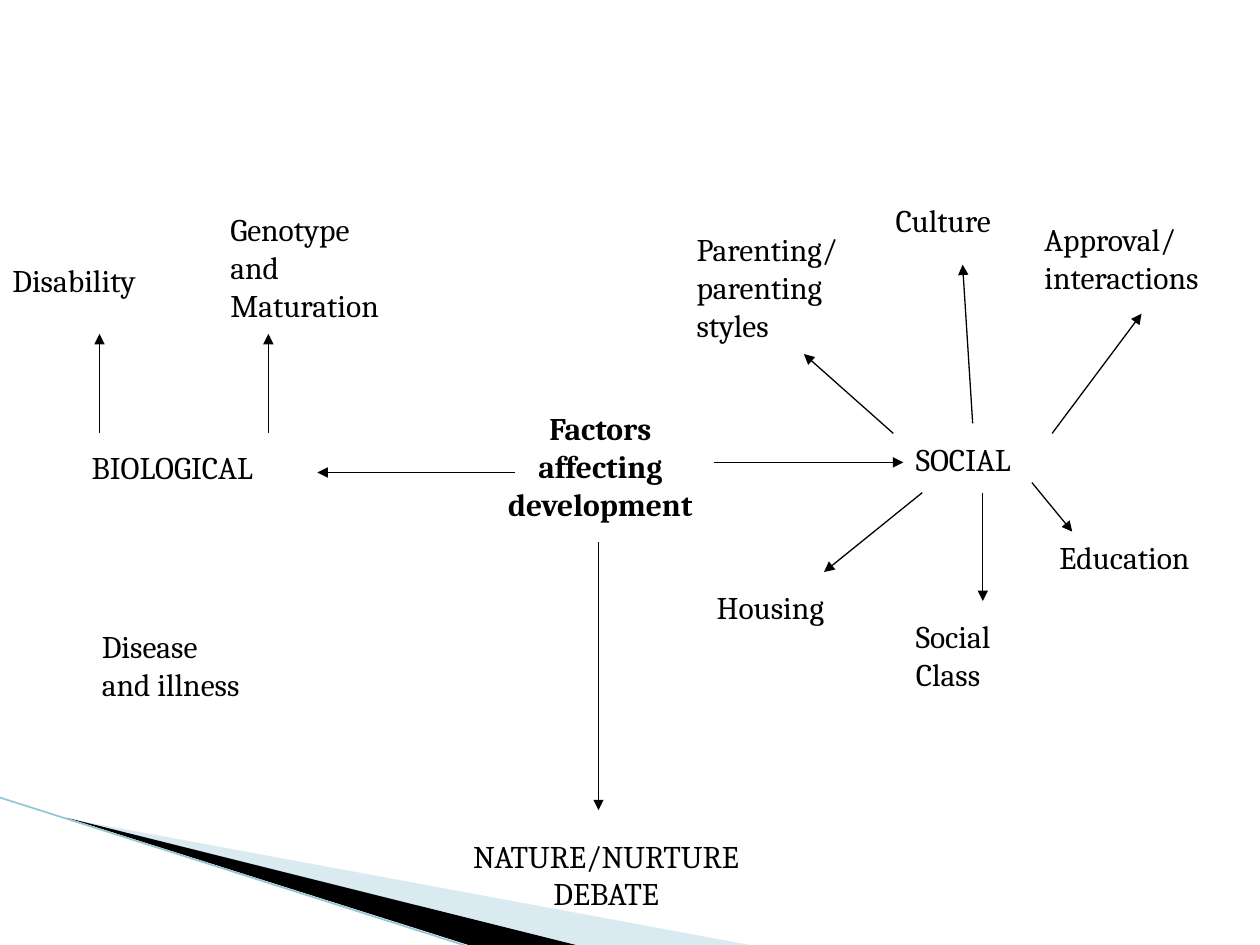
from dataclasses import dataclass

from lxml.etree import SubElement
from pptx import Presentation
from pptx.dml.color import RGBColor as RGB
from pptx.enum.shapes import MSO_CONNECTOR as CONN
from pptx.enum.text import PP_ALIGN as ALIGN
from pptx.oxml.ns import qn
from pptx.util import Pt

PX = 9144  # EMU in one px, at 100 px to the inch
LINE_H, PAD = 30, 10  # height of a text line, and of both text insets together


@dataclass(frozen=True)
class Theme:
    font: str = "Cambria"
    size: int = 18
    ink: str = "000000"
    pale: str = "A0CBDC"
    edge: str = "97C5D8"
    arrow_width: float = 0.75
    edge_width: float = 0.95


THEME = Theme()


def add_text(slide, text, x, y, w, lines=1, bold=False, align=ALIGN.LEFT):
    box = slide.shapes.add_textbox(x * PX, y * PX, w * PX, (lines * LINE_H + PAD) * PX)
    tf = box.text_frame
    tf.word_wrap = True
    p = tf.paragraphs[0]
    p.alignment = align
    r = p.add_run()
    r.text = text
    r.font.name, r.font.size, r.font.bold = THEME.font, Pt(THEME.size), bold
    r.font.color.rgb = RGB.from_string(THEME.ink)


def add_line(slide, x1, y1, x2, y2, color=THEME.ink, width=THEME.arrow_width, arrow=True):
    c = slide.shapes.add_connector(CONN.STRAIGHT, x1 * PX, y1 * PX, x2 * PX, y2 * PX)
    c.line.color.rgb = RGB.from_string(color)
    c.line.width = Pt(width)
    if arrow:
        SubElement(c.line._get_or_add_ln(), qn("a:tailEnd"), type="triangle")
    SubElement(c._element.spPr, qn("a:effectLst"))


def add_wedge(slide, points, color, alpha=None):
    """Draw a filled outline; alpha is its opacity in percent."""
    fb = slide.shapes.build_freeform(*points[0], scale=PX)
    fb.add_line_segments(points[1:], close=True)
    sp = fb.convert_to_shape()
    sp.shadow.inherit = False
    sp.line.fill.background()
    sp.fill.solid()
    sp.fill.fore_color.rgb = RGB.from_string(color)
    if alpha is not None:
        clr = sp._element.spPr.find(qn("a:solidFill"))[0]
        SubElement(clr, qn("a:alpha"), val=str(alpha * 1000))


def draw_corner(slide, x, y):
    def shift(points):
        return [(x + dx, y + dy) for dx, dy in points]

    add_wedge(slide, shift([(55, 17), (595, 117), (456, 117)]), THEME.pale, 40)
    add_wedge(slide, shift([(53, 16), (457, 117), (372, 117)]), THEME.ink)
    add_line(slide, x, y, x + 371, y + 118, THEME.edge, THEME.edge_width, arrow=False)


def draw_group(slide, x, y, labels, arrows):
    """Place labels (text, x, y, width, lines) and arrows (x1, y1, x2, y2)."""
    for text, dx, dy, w, lines in labels:
        add_text(slide, text, x + dx, y + dy, w, lines)
    for x1, y1, x2, y2 in arrows:
        add_line(slide, x + x1, y + y1, x + x2, y + y2)


def draw_hub(slide, x, y):
    add_text(slide, "Factors affecting development", x + 134, y, 181, 3,
             bold=True, align=ALIGN.CENTER)
    add_text(slide, "NATURE/NURTURE DEBATE", x + 95, y + 339, 268, 2, align=ALIGN.CENTER)
    draw_group(slide, x, y, [], [
        (157, 55, 0, 55),
        (315, 47, 465, 47),
        (223, 110, 223, 323),
    ])


def draw_biological(slide, x, y):
    draw_group(slide, x, y, [
        ("BIOLOGICAL", 63, 189, 173, 1),
        ("Disability", 0, 40, 134, 1),
        ("Genotype and Maturation", 173, 0, 150, 3),
        ("Disease and illness", 71, 331, 134, 3),
    ], [(dx, 182, dx, 103) for dx in (79, 213)])


def draw_social(slide, x, y):
    draw_group(slide, x, y, [
        ("SOCIAL", 174, 189, 118, 1),
        ("Parenting/parenting styles", 0, 23, 134, 3),
        ("Culture", 158, 0, 134, 1),
        ("Approval/ interactions", 276, 15, 165, 2),
        ("Education", 288, 267, 169, 1),
        ("Social Class", 174, 330, 94, 2),
        ("Housing", 16, 307, 134, 1),
    ], [
        (166, 189, 95, 126),
        (229, 181, 221, 55),
        (292, 189, 363, 94),
        (276, 228, 308, 267),
        (237, 236, 237, 322),
        (189, 236, 111, 299),
    ])


def main():
    prs = Presentation()
    prs.slide_width, prs.slide_height = 1000 * PX, 750 * PX
    s = prs.slides.add_slide(prs.slide_layouts[6])
    draw_corner(s, 0, 633)
    draw_hub(s, 252, 320)
    draw_biological(s, 0, 162)
    draw_social(s, 543, 155)
    prs.save("out.pptx")


if __name__ == "__main__":
    main()
